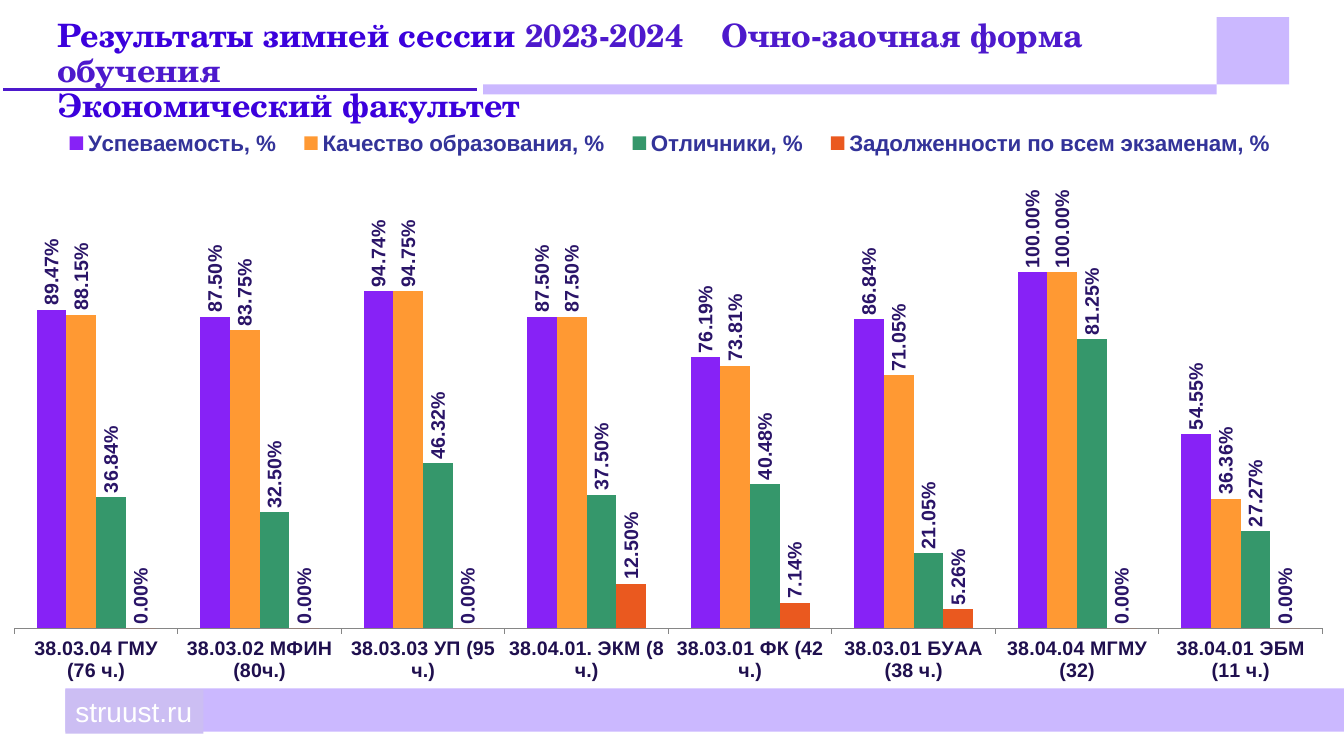
"""Builds the slide with the winter session results of the economics faculty."""
from lxml import etree
from pptx import Presentation
from pptx import util as u
from pptx.chart.data import CategoryChartData
from pptx.dml.color import RGBColor
from pptx.enum import chart as ch, shapes, text
from pptx.oxml import parse_xml
from pptx.oxml.ns import nsdecls, qn

COLORS = {
    "lilac": "CBB8FF", "rule": "4D19CC", "white": "FFFFFF", "title": "3B00DC",
    "badge": "CCBEF3", "legend": "333399", "category": "1F0F4E",
    "value": "2A1468", "axis": "868686",
}
TITLE = [
    [("Результаты зимней сессии ", "title"),
     ("2023-2024\t Очно-заочная форма обучения", "rule")],
    [("Экономический факультет", "title")],
]
SITE = "struust.ru"
PROGRAMMES = [
    "38.03.04 ГМУ (76 ч.)", "38.03.02 МФИН (80ч.)", "38.03.03 УП (95 ч.)",
    "38.04.01. ЭКМ (8 ч.)", "38.03.01 ФК (42 ч.)", "38.03.01 БУАА (38 ч.)",
    "38.04.04 МГМУ (32)", "38.04.01 ЭБМ (11 ч.)",
]
RESULTS = [
    ("Успеваемость, %", "8722F6",
     (0.8947, 0.875, 0.9474, 0.875, 0.7619, 0.8684, 1, 0.5455)),
    ("Качество образования, %", "FF9933",
     (0.8815, 0.8375, 0.9475, 0.875, 0.7381, 0.7105, 1, 0.3636)),
    ("Отличники, %", "35976B",
     (0.3684, 0.325, 0.4632, 0.375, 0.4048, 0.2105, 0.8125, 0.2727)),
    ("Задолженности по всем экзаменам, %", "EA591F",
     (0, 0, 0, 0.125, 0.0714, 0.0526, 0, 0)),
]
BANDS = [
    ((0, 2.13, 30.66, 0.25), "lilac", None),
    ((1.65, 17.35, 32.22, 1.09), "lilac", None),
    ((0, 2.13, 12.09, 0.25), "rule", "white"),
    ((30.66, 0.43, 1.83, 1.7), "lilac", None),
]
TITLE_BOX = (1.19, 0.38, 29.26, 1.17)
CHART_BOX = (0.23, 2.06, 33.3, 15.47)
SITE_BOX = (1.65, 17.37, 3.48, 1.12)
PLOT_AREA = (0.004, 0.195, 0.99, 0.695)
LEGEND_AREA = (0.03, 0.06, 0.94, 0.08)


def rgb(name):
    return RGBColor.from_string(COLORS[name])


def cm(box):
    return [u.Cm(side) for side in box]


def set_font(font, size, color, bold=True, face="Arial"):
    font.name, font.size, font.bold = face, u.Pt(size), bold
    font.color.rgb = rgb(color)


def add_band(slide, box, fill, line=None):
    band = slide.shapes.add_shape(shapes.MSO_SHAPE.RECTANGLE, *cm(box))
    band.shadow.inherit = False
    band.fill.solid()
    band.fill.fore_color.rgb = rgb(fill)
    if line:
        band.line.color.rgb = rgb(line)
        band.line.width = u.Pt(4.5)
    else:
        band.line.fill.background()
    return band


def add_title(slide):
    frame = slide.shapes.add_textbox(*cm(TITLE_BOX)).text_frame
    frame.word_wrap = True
    heading = frame.paragraphs[0]
    heading.line_spacing = 0.9
    for number, line in enumerate(TITLE):
        if number:
            heading.add_line_break()
        for words, color in line:
            run = heading.add_run()
            run.text = words
            set_font(run.font, 23, color, face="TeX Gyre Schola")


def place(area, inner=False):
    target = '<c:layoutTarget val="inner"/>' if inner else ""
    modes = "".join(f'<c:{side}Mode val="edge"/>' for side in "xy")
    sizes = "".join(f'<c:{side} val="{part}"/>' for side, part in zip("xywh", area))
    return parse_xml(f'<c:layout {nsdecls("c")}><c:manualLayout>{target}'
                     f'{modes}{sizes}</c:manualLayout></c:layout>')


def add_results(slide):
    data = CategoryChartData(number_format="0.00%")
    data.categories = PROGRAMMES
    for name, _, shares in RESULTS:
        data.add_series(name, shares)
    chart = slide.shapes.add_chart(
        ch.XL_CHART_TYPE.COLUMN_CLUSTERED, *cm(CHART_BOX), data).chart
    chart.has_title = False
    set_font(chart.font, 16, "legend")

    chart.has_legend = True
    legend = chart.legend
    legend.position = ch.XL_LEGEND_POSITION.TOP
    legend.include_in_layout = False
    set_font(legend.font, 16, "legend")

    plot = chart.plots[0]
    plot.gap_width, plot.overlap, plot.vary_by_categories = 150, 0, False
    for series, (_, color, _) in zip(plot.series, RESULTS):
        series.format.fill.solid()
        series.format.fill.fore_color.rgb = RGBColor.from_string(color)
        series.invert_if_negative = False
        labels = series.data_labels
        labels.show_value = True
        labels.number_format, labels.number_format_is_linked = "0.00%", False
        labels.position = ch.XL_LABEL_POSITION.OUTSIDE_END
        set_font(labels.font, 14, "value")

    shares = chart.value_axis
    shares.minimum_scale, shares.maximum_scale = 0, 1.2
    shares.has_major_gridlines = False
    shares.visible = False
    programmes = chart.category_axis
    programmes.major_tick_mark = ch.XL_TICK_MARK.OUTSIDE
    programmes.format.line.color.rgb = rgb("axis")
    set_font(programmes.tick_labels.font, 14, "category")

    space = chart.element
    for body in space.iterfind(".//" + qn("c:dLbls") + "/" + qn("c:txPr") + "/" + qn("a:bodyPr")):
        body.set("rot", "-5400000")
        body.set("vert", "horz")
    area = space.find(".//" + qn("c:plotArea"))
    for old in area.findall(qn("c:layout")):
        area.remove(old)
    area.insert(0, place(PLOT_AREA, inner=True))
    key = space.find(".//" + qn("c:legend"))
    for old in key.findall(qn("c:layout")):
        key.remove(old)
    key.find(qn("c:legendPos")).addnext(place(LEGEND_AREA))


def add_site(slide):
    frame = add_band(slide, SITE_BOX, "badge").text_frame
    frame.word_wrap = False
    frame.vertical_anchor = text.MSO_ANCHOR.TOP
    address = frame.paragraphs[0]
    address.alignment = text.PP_ALIGN.LEFT
    run = address.add_run()
    run.text = SITE
    set_font(run.font, 20, "white", bold=False)


def main():
    deck = Presentation()
    deck.slide_width, deck.slide_height = u.Cm(33.87), u.Cm(19.05)
    slide = deck.slides.add_slide(deck.slide_layouts[6])
    for band in BANDS:
        add_band(slide, *band)
    add_title(slide)
    add_results(slide)
    add_site(slide)
    deck.save("out.pptx")


if __name__ == "__main__":
    main()
